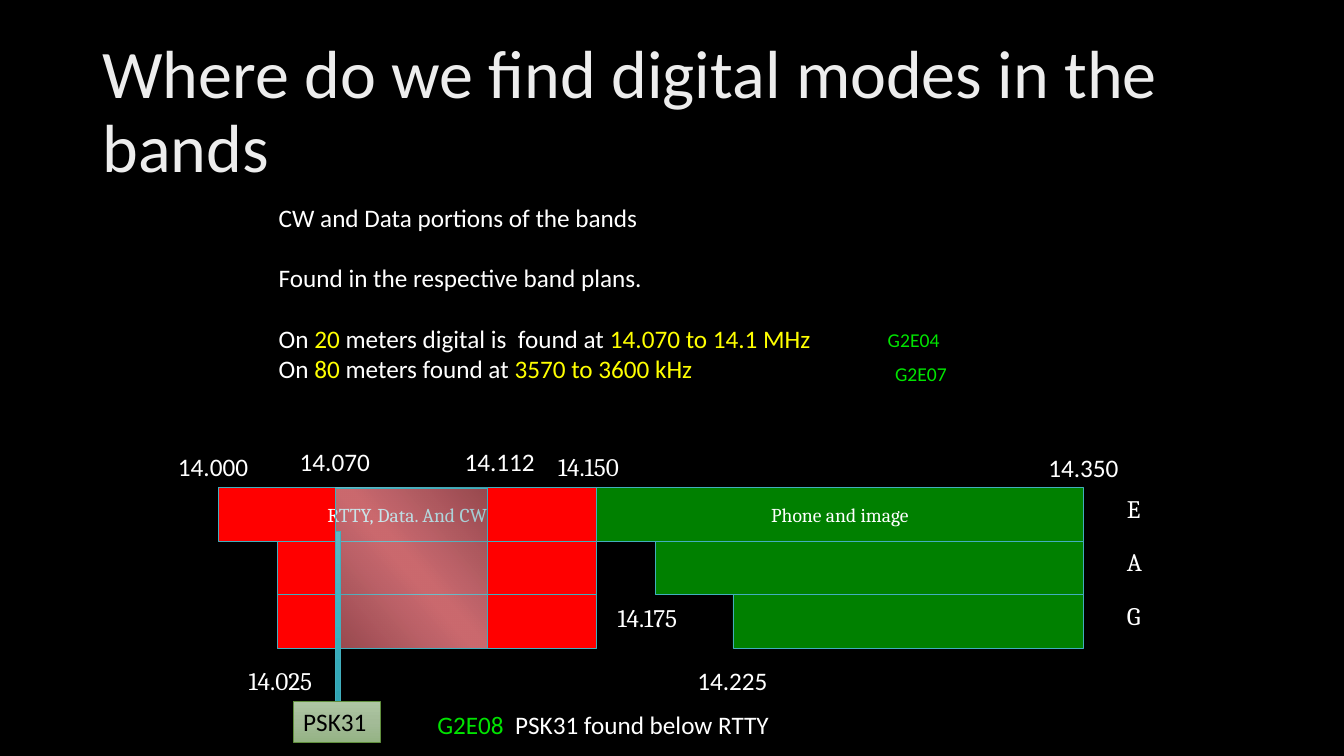
import pptx
import pptx.util
import pptx.dml.color
import pptx.enum.shapes
import pptx.enum.text
import pptx.oxml
import pptx.oxml.ns

Pt = pptx.util.Pt
RGB = pptx.dml.color.RGBColor.from_string
ANCHOR = pptx.enum.text.MSO_ANCHOR
ALIGN = pptx.enum.text.PP_ALIGN
RECT = pptx.enum.shapes.MSO_SHAPE.RECTANGLE

COLORS = {
    "black": "000000", "white": "FFFFFF", "yellow": "FFFF00", "lime": "00E400",
    "red": "FF0000", "green": "008000", "teal": "41AEBD", "olive": "608F3D",
}
GRADIENTS = {  # angle, opacity in percent, stops
    "title": (80, 100, [(0, "BFBFBF"), (28, "EDEDED"), (100, "FFFFFF")]),
    "digital": (139, 51, [(0, "348B97"), (33, "77BCC8"), (47, "98CCD6"),
                          (53, "98CCD6"), (68, "78BCC8"), (100, "348B97")]),
    "marker": (90, 100, [(0, "5FB7C5"), (50, "3BB3C3"), (100, "2FA3B3")]),
    "psk31": (90, 100, [(0, "AEC6A3"), (50, "A3BB97"), (100, "94B384")]),
}


def paint(fill, parent, name):
    """Fill a shape or a run with a solid colour or a named gradient."""
    if name in COLORS:
        fill.solid()
        fill.fore_color.rgb = RGB(COLORS[name])
        return
    angle, opacity, stops = GRADIENTS[name]
    stop_xml = "".join(
        f'<a:gs pos="{pos * 1000}"><a:srgbClr val="{color}">'
        f'<a:alpha val="{opacity * 1000}"/></a:srgbClr></a:gs>'
        for pos, color in stops)
    fill.gradient()
    old = parent.find(pptx.oxml.ns.qn("a:gradFill"))
    parent.replace(old, pptx.oxml.parse_xml(
        f'<a:gradFill {pptx.oxml.ns.nsdecls("a")} rotWithShape="1">'
        f'<a:gsLst>{stop_xml}</a:gsLst>'
        f'<a:lin ang="{angle * 60000}" scaled="0"/></a:gradFill>'))


def add_text(shapes, x, y, w, h, lines, size=18, font="Calibri"):
    """Add a text box; each line is (space before, [(text, colour), ...])."""
    sp = shapes.add_textbox(Pt(x), Pt(y), Pt(w), Pt(h))
    tf = sp.text_frame
    tf.word_wrap = False
    tf.auto_size = pptx.enum.text.MSO_AUTO_SIZE.SHAPE_TO_FIT_TEXT
    for i, (gap, runs) in enumerate(lines):
        p = tf.add_paragraph() if i else tf.paragraphs[0]
        if gap:
            p.space_before = Pt(gap)
        p.font.size = Pt(size)
        p.font.name = font
        for text, color in runs:
            r = p.add_run()
            r.text = text
            r.font.color.rgb = RGB(COLORS[color])


prs = pptx.Presentation()
prs.slide_width, prs.slide_height = Pt(960), Pt(540)
s = prs.slides.add_slide(prs.slide_layouts[5])
s.background.fill.solid()
s.background.fill.fore_color.rgb = RGB(COLORS["black"])

# Title
title = s.shapes.title
title.left, title.top, title.width, title.height = Pt(66), Pt(28.75), Pt(828), Pt(104.4)
tf = title.text_frame
tf.word_wrap = True
tf.auto_size = pptx.enum.text.MSO_AUTO_SIZE.NONE
tf.vertical_anchor = ANCHOR.MIDDLE
p = tf.paragraphs[0]
p.alignment = ALIGN.LEFT
p.line_spacing = 0.9
p.font.size = Pt(48.6)
p.font.name = "Calibri"
r = p.add_run()
r.text = "Where do we find digital modes in the bands"
paint(r.font.fill, r.font._element if hasattr(r.font, "_element") else r._r.get_or_add_rPr(), "title")

# Explanation
add_text(s.shapes, 192, 141, 397.5, 138, [
    (0, [("CW and Data portions of the bands", "white")]),
    (21.6, [("Found in the respective band plans.", "white")]),
    (21.6, [("On ", "white"), ("20", "yellow"),
            (" meters digital is  found at ", "white"),
            ("14.070 to 14.1 MHz", "yellow")]),
    (0, [("On ", "white"), ("80", "yellow"), (" meters found at ", "white"),
         ("3570 to 3600 kHz", "yellow")]),
])

# Band plan: one row per licence class, then the digital segment and PSK31 marker
ROW_TOP, ROW_H = 348.5, 38.2
CW_END, BAND_END = 426, 774
bars = []
for row, (cw_start, phone_start) in enumerate([(156, 426), (198, 468), (198, 523.5)]):
    y = ROW_TOP + row * ROW_H
    bars += [
        (phone_start, y, BAND_END - phone_start, ROW_H, "green", "teal",
         "" if row else "Phone and image"),
        (cw_start, y, CW_END - cw_start, ROW_H, "red", "teal",
         "" if row else "RTTY, Data. And CW"),
    ]
bars += [
    (239.75, ROW_TOP, 108.75, 3 * ROW_H, "digital", "teal", ""),
    (239.75, 379.5, 3.75, 121.75, "marker", "teal", ""),
    (209.5, 501.25, 62, 29, "psk31", "olive", "PSK31"),
]
for x, y, w, h, fill, line, text in bars:
    sp = s.shapes.add_shape(RECT, Pt(x), Pt(y), Pt(w), Pt(h))
    sp.shadow.inherit = False
    paint(sp.fill, sp._element.spPr, fill)
    sp.line.color.rgb = RGB(COLORS[line])
    sp.line.width = Pt(0.5)
    if text:
        is_tag = fill == "psk31"
        tf = sp.text_frame
        tf.word_wrap = not is_tag
        tf.vertical_anchor = ANCHOR.TOP if is_tag else ANCHOR.MIDDLE
        p = tf.paragraphs[0]
        p.text = text
        p.alignment = ALIGN.LEFT if is_tag else ALIGN.CENTER
        p.font.size = Pt(18 if is_tag else 14)
        p.font.name = "Calibri" if is_tag else "Cambria"
        p.font.color.rgb = RGB(COLORS["black" if is_tag else "white"])

# Licence class letters
for row, letter in enumerate("EAG"):
    add_text(s.shapes, 797.75, ROW_TOP + row * ROW_H, 26, 29,
             [(0, [(letter, "white")])], font="Cambria")

# Frequency labels
for text, x, y, w, font in [
    ("14.000", 120, 319, 65, "Calibri"),
    ("14.025", 170.5, 471.75, 68.5, "Cambria"),
    ("14.070", 207, 315.5, 65, "Calibri"),
    ("14.112", 324.75, 315.5, 65, "Calibri"),
    ("14.150", 391.5, 319, 68.5, "Cambria"),
    ("14.175", 434, 426.5, 68.5, "Cambria"),
    ("14.225", 491, 471.5, 65, "Calibri"),
    ("14.350", 741.75, 319.75, 65, "Calibri"),
]:
    add_text(s.shapes, x, y, w, 29, [(0, [(text, "white")])], font=font)

# Question references
add_text(s.shapes, 632.25, 254.75, 52.5, 24.25, [(0, [("G2E07", "lime")])], size=14)
add_text(s.shapes, 627, 230.5, 54.75, 24.25, [(0, [("G2E04", "lime")])], size=14)
add_text(s.shapes, 305.25, 503.25, 262, 29,
         [(0, [("G2E08", "lime"), ("  PSK31 found below RTTY", "white")])])

prs.save("out.pptx")
